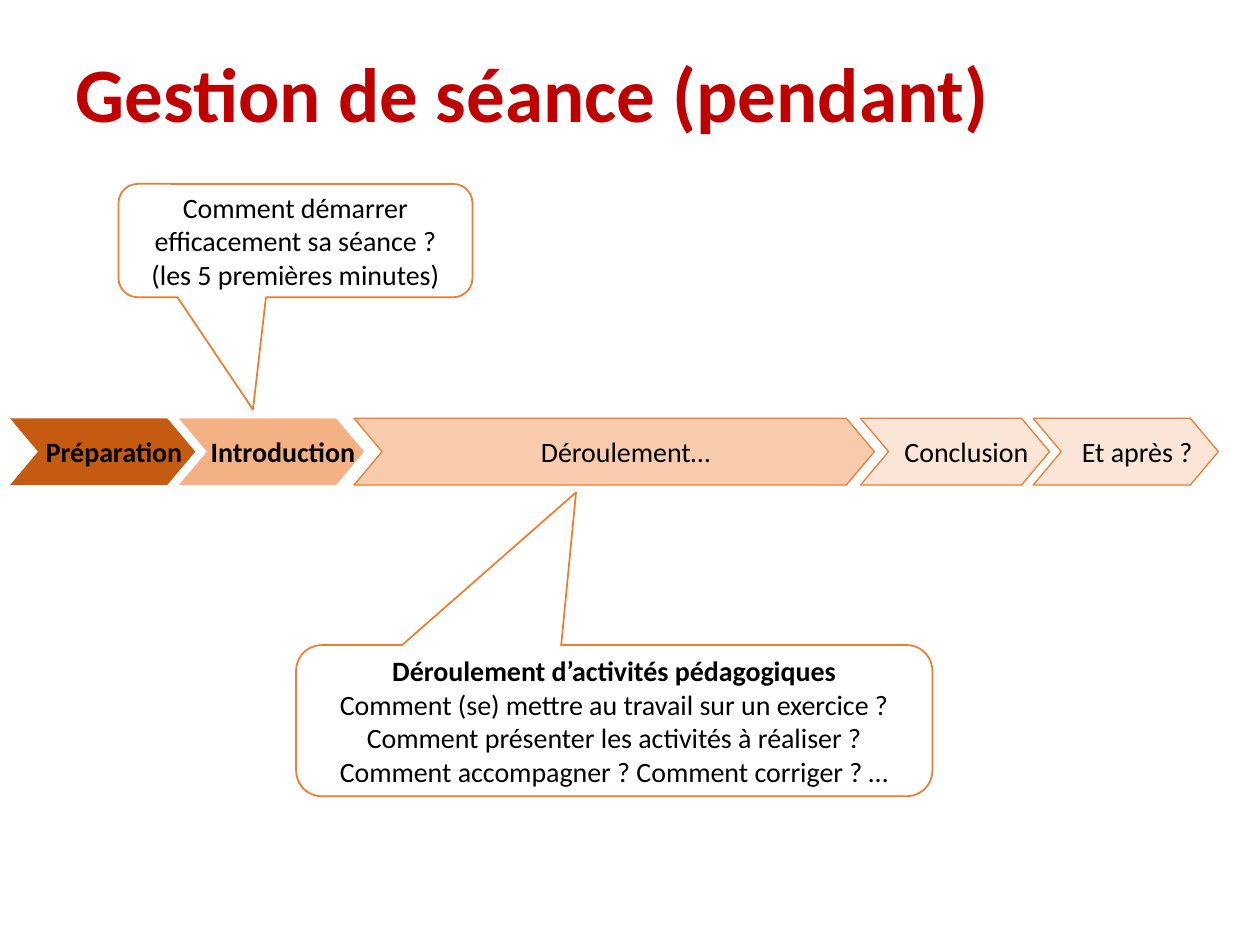
from pptx import Presentation
from pptx.dml.color import RGBColor
from pptx.enum.shapes import MSO_SHAPE
from pptx.enum.text import MSO_ANCHOR, PP_ALIGN
from pptx.util import Inches, Pt

CHEVRON = MSO_SHAPE.CHEVRON
CALLOUT = MSO_SHAPE.ROUNDED_RECTANGULAR_CALLOUT
CENTER, LEFT = PP_ALIGN.CENTER, PP_ALIGN.LEFT
MIDDLE = MSO_ANCHOR.MIDDLE

FONT = "Calibri"
ORANGE, BLACK, RED = "ED7D31", "000000", "C00000"
STEP_TOP, STEP_HEIGHT = 3.32, 0.53

TITLE = "Gestion de séance (pendant)"

# label, left, width, fill, outlined, bold
STEPS = [
    ("Préparation", 0.08, 1.47, "C55A11", False, True),
    ("Introduction", 1.42, 1.47, "F4B183", False, True),
    ("Déroulement…", 2.81, 4.13, "F8CBAD", True, False),
    ("Conclusion", 6.83, 1.5, "FBE5D6", True, False),
    ("Et après ?", 8.2, 1.47, "FBE5D6", True, False),
]

# box, pointer tip relative to the box centre, (text, bold) lines
CALLOUTS = [
    ((0.94, 1.46, 2.81, 0.9), (-0.12, 1.49), [
        ("Comment démarrer efficacement sa séance ? (les 5 premières minutes)", False),
    ]),
    ((2.35, 5.12, 5.05, 1.2), (-0.06, -1.51), [
        ("Déroulement d’activités pédagogiques", True),
        ("Comment (se) mettre au travail sur un exercice ?", False),
        ("Comment présenter les activités à réaliser ?", False),
        ("Comment accompagner ? Comment corriger ? …", False),
    ]),
]


def rgb(value):
    return RGBColor.from_string(value)


def write(tf, lines, size=16, color=BLACK, align=CENTER):
    """Fill a text frame with one paragraph per (text, bold) pair."""
    tf.vertical_anchor = MIDDLE
    for i, (text, bold) in enumerate(lines):
        p = tf.add_paragraph() if i else tf.paragraphs[0]
        p.alignment = align
        r = p.add_run()
        r.text = text
        r.font.name = FONT
        r.font.size = Pt(size)
        r.font.bold = bold
        r.font.color.rgb = rgb(color)


def add_shape(slide, kind, box, adjustments, fill=None, line_width=None):
    sp = slide.shapes.add_shape(kind, *map(Inches, box))
    sp.shadow.inherit = False
    for i, value in enumerate(adjustments):
        sp.adjustments[i] = value
    if fill:
        sp.fill.solid()
        sp.fill.fore_color.rgb = rgb(fill)
    else:
        sp.fill.background()
    if line_width:
        sp.line.color.rgb = rgb(ORANGE)
        sp.line.width = Pt(line_width)
    else:
        sp.line.fill.background()
    return sp


def add_step(slide, label, left, width, fill, outlined, bold):
    sp = add_shape(slide, CHEVRON, (left, STEP_TOP, width, STEP_HEIGHT),
                   [0.42], fill, 0.75 if outlined else None)
    tf = sp.text_frame
    tf.word_wrap = False
    tf.margin_left = Inches(0.28)
    write(tf, [(label, bold)])


def add_callout(slide, box, tip, lines):
    sp = add_shape(slide, CALLOUT, box, [*tip, 0.17], line_width=1)
    sp.text_frame.word_wrap = True
    write(sp.text_frame, lines)


def main():
    prs = Presentation()
    prs.slide_width, prs.slide_height = Inches(10), Inches(7.5)
    slide = prs.slides.add_slide(prs.slide_layouts[5])

    title = slide.shapes.title
    title.left, title.top = Inches(0.5), Inches(0.15)
    title.width, title.height = Inches(9), Inches(1.25)
    write(title.text_frame, [(TITLE, True)], 44, RED, LEFT)
    title.text_frame.paragraphs[0].line_spacing = 0.9

    for step in STEPS:
        add_step(slide, *step)
    for callout in CALLOUTS:
        add_callout(slide, *callout)

    prs.save("out.pptx")


if __name__ == "__main__":
    main()
